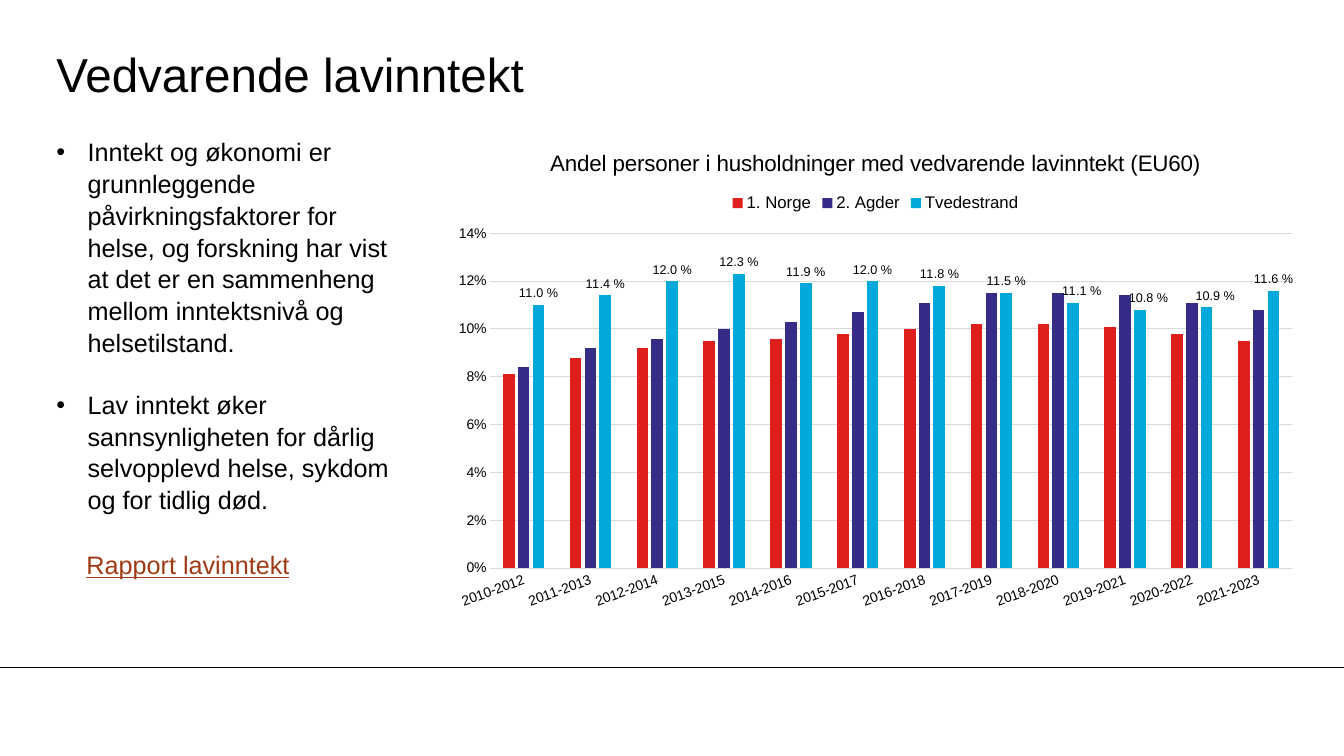
from lxml import etree
from pptx import Presentation
from pptx.chart.data import CategoryChartData
from pptx.dml.color import RGBColor
from pptx.enum.chart import XL_CHART_TYPE, XL_LABEL_POSITION, XL_LEGEND_POSITION, XL_TICK_MARK
from pptx.enum.shapes import MSO_CONNECTOR
from pptx.enum.text import MSO_ANCHOR, PP_ALIGN
from pptx.oxml.ns import qn
from pptx.util import Cm, Pt

COLUMNS = XL_CHART_TYPE.COLUMN_CLUSTERED
OUTSIDE = XL_LABEL_POSITION.OUTSIDE_END
LEGEND_TOP = XL_LEGEND_POSITION.TOP
NO_TICK = XL_TICK_MARK.NONE
STRAIGHT = MSO_CONNECTOR.STRAIGHT
MIDDLE = MSO_ANCHOR.MIDDLE
LEFT = PP_ALIGN.LEFT

WIDTH, HEIGHT = 33.87, 19.05
COLORS = {"text": "000000", "link": "9F3A14", "grid": "D9D9D9",
          "1. Norge": "DF1F1D", "2. Agder": "342C86", "Tvedestrand": "00A9DA"}
PERCENT = "0.0\\ %"
BULLETS = [
    "Inntekt og økonomi er grunnleggende påvirkningsfaktorer for helse, og forskning har vist "
    "at det er en sammenheng mellom inntektsnivå og helsetilstand.",
    "Lav inntekt øker sannsynligheten for dårlig selvopplevd helse, sykdom og for tidlig død.",
]
CHART_TITLE = "Andel personer i husholdninger med vedvarende lavinntekt (EU60)"
PERIODS = [f"{year}-{year + 2}" for year in range(2010, 2022)]
SHARES = {
    "1. Norge": [8.1, 8.8, 9.2, 9.5, 9.6, 9.8, 10.0, 10.2, 10.2, 10.1, 9.8, 9.5],
    "2. Agder": [8.4, 9.2, 9.6, 10.0, 10.3, 10.7, 11.1, 11.5, 11.5, 11.4, 11.1, 10.8],
    "Tvedestrand": [11.0, 11.4, 12.0, 12.3, 11.9, 12.0, 11.8, 11.5, 11.1, 10.8, 10.9, 11.6],
}
LABEL_SHIFTS = {8: 0.01, 9: 0.01, 10: 0.01}
PLOT_AREA = {"x": 0.056, "y": 0.211, "w": 0.924, "h": 0.685}


def rgb(name):
    """Return the named colour."""
    return RGBColor.from_string(COLORS[name])


def set_font(font, size, color="text", **extra):
    """Apply the slide's typeface with the given format values."""
    values = {"name": "Arial", "size": Pt(size), "bold": False, **extra}
    for key, value in values.items():
        setattr(font, key, value)
    font.color.rgb = rgb(color)


def add_layout(parent, position, values):
    """Insert a manual chart layout at a child position."""
    layout = etree.Element(qn("c:layout"))
    manual = etree.SubElement(layout, qn("c:manualLayout"))
    for key, value in values.items():
        etree.SubElement(manual, qn(f"c:{key}")).set("val", str(value))
    parent.insert(position, layout)


def add_title(page, box):
    """Place the slide title."""
    title = page.shapes.title
    title.left, title.top, title.width, title.height = map(Cm, box)
    frame = title.text_frame
    frame.text = "Vedvarende lavinntekt"
    margins = dict.fromkeys(("margin_left", "margin_top", "margin_right", "margin_bottom"), 0)
    for key, value in {"vertical_anchor": MIDDLE, **margins}.items():
        setattr(frame, key, value)
    para = frame.paragraphs[0]
    para.alignment = LEFT
    set_font(para.runs[0].font, 34)


def add_bullets(page, box):
    """Place the bulleted text column."""
    frame = page.shapes.add_textbox(*map(Cm, box)).text_frame
    frame.word_wrap = True
    for index, words in enumerate(BULLETS):
        para = frame.add_paragraph() if index else frame.paragraphs[0]
        props = para._p.get_or_add_pPr()
        props.set("marL", str(Cm(0.79)))
        props.set("indent", str(-Cm(0.79)))
        etree.SubElement(props, qn("a:buFont")).set("typeface", "Arial")
        etree.SubElement(props, qn("a:buChar")).set("char", "•")
        para.line_spacing = 1.05
        if index:
            para.space_before = Pt(21.7)
        span = para.add_run()
        span.text = words
        set_font(span.font, 18)


def add_report_label(page, box):
    """Place the underlined report name."""
    frame = page.shapes.add_textbox(*map(Cm, box)).text_frame
    frame.word_wrap = True
    span = frame.paragraphs[0].add_run()
    span.text = "Rapport lavinntekt"
    set_font(span.font, 18, "link", underline=True)


def format_axes(chart):
    """Format both axes and the gridlines."""
    for axis in (chart.category_axis, chart.value_axis):
        axis.major_tick_mark = axis.minor_tick_mark = NO_TICK
        set_font(axis.tick_labels.font, 10)
    periods, shares = chart.category_axis, chart.value_axis
    periods._element.find(qn("c:txPr")).find(qn("a:bodyPr")).set("rot", "-1200000")
    for key, value in {"minimum_scale": 0, "maximum_scale": 0.14, "major_unit": 0.02}.items():
        setattr(shares, key, value)
    shares.tick_labels.number_format = "0%"
    shares.tick_labels.number_format_is_linked = False
    shares.format.line.fill.background()
    for line in (periods.format.line, shares.major_gridlines.format.line):
        line.color.rgb = rgb("grid")
        line.width = Pt(0.75)


def add_labels(series):
    """Label the series and nudge the crowded labels to the right."""
    labels = series.data_labels
    labels.show_value = True
    labels.number_format = PERCENT
    labels.number_format_is_linked = False
    labels.position = OUTSIDE
    set_font(labels.font, 9)
    for index in LABEL_SHIFTS:
        label = series.points[index].data_label
        set_font(label.font, 9)
        label.position = OUTSIDE
    for element, shift in zip(labels._element.findall(qn("c:dLbl")), LABEL_SHIFTS.values()):
        add_layout(element, 1, {"x": shift, "y": 0})


def add_income_chart(page, box):
    """Place the column chart of persistent low income."""
    data = CategoryChartData(number_format=PERCENT)
    data.categories = PERIODS
    for name, values in SHARES.items():
        data.add_series(name, [round(value / 100, 3) for value in values])
    chart = page.shapes.add_chart(COLUMNS, *map(Cm, box), data).chart
    set_font(chart.font, 10)
    chart.has_title = True
    chart.chart_title.include_in_layout = False
    frame = chart.chart_title.text_frame
    frame.text = CHART_TITLE
    set_font(frame.paragraphs[0].runs[0].font, 16)
    chart.has_legend = True
    chart.legend.position = LEGEND_TOP
    chart.legend.include_in_layout = False
    set_font(chart.legend.font, 12)
    format_axes(chart)
    plot = chart.plots[0]
    for key, value in {"gap_width": 219, "overlap": -27, "vary_by_categories": False}.items():
        setattr(plot, key, value)
    for series in plot.series:
        series.format.fill.solid()
        series.format.fill.fore_color.rgb = rgb(series.name)
    add_labels(plot.series[2])
    area = chart._chartSpace.find(f".//{qn('c:plotArea')}")
    for old in area.findall(qn("c:layout")):
        area.remove(old)
    modes = {"layoutTarget": "inner", "xMode": "edge", "yMode": "edge"}
    add_layout(area, 0, {**modes, **PLOT_AREA})


def add_footer_line(page, top):
    """Draw the rule across the foot of the slide."""
    line = page.shapes.add_connector(STRAIGHT, 0, Cm(top), Cm(WIDTH), Cm(top))
    line.line.color.rgb = rgb("text")
    line.line.width = Pt(0.75)
    etree.SubElement(line._element.spPr, qn("a:effectLst"))


def main():
    """Build and save the deck."""
    deck = Presentation()
    deck.slide_width, deck.slide_height = Cm(WIDTH), Cm(HEIGHT)
    page = deck.slides.add_slide(deck.slide_layouts[5])
    add_footer_line(page, 16.81)
    add_title(page, (1.42, 0.91, 28.19, 1.9))
    add_bullets(page, (1.17, 3.28, 8.89, 9.5))
    add_report_label(page, (1.93, 13.72, 6.73, 1.02))
    add_income_chart(page, (11.13, 3.28, 21.87, 12.32))
    deck.save("out.pptx")


if __name__ == "__main__":
    main()
